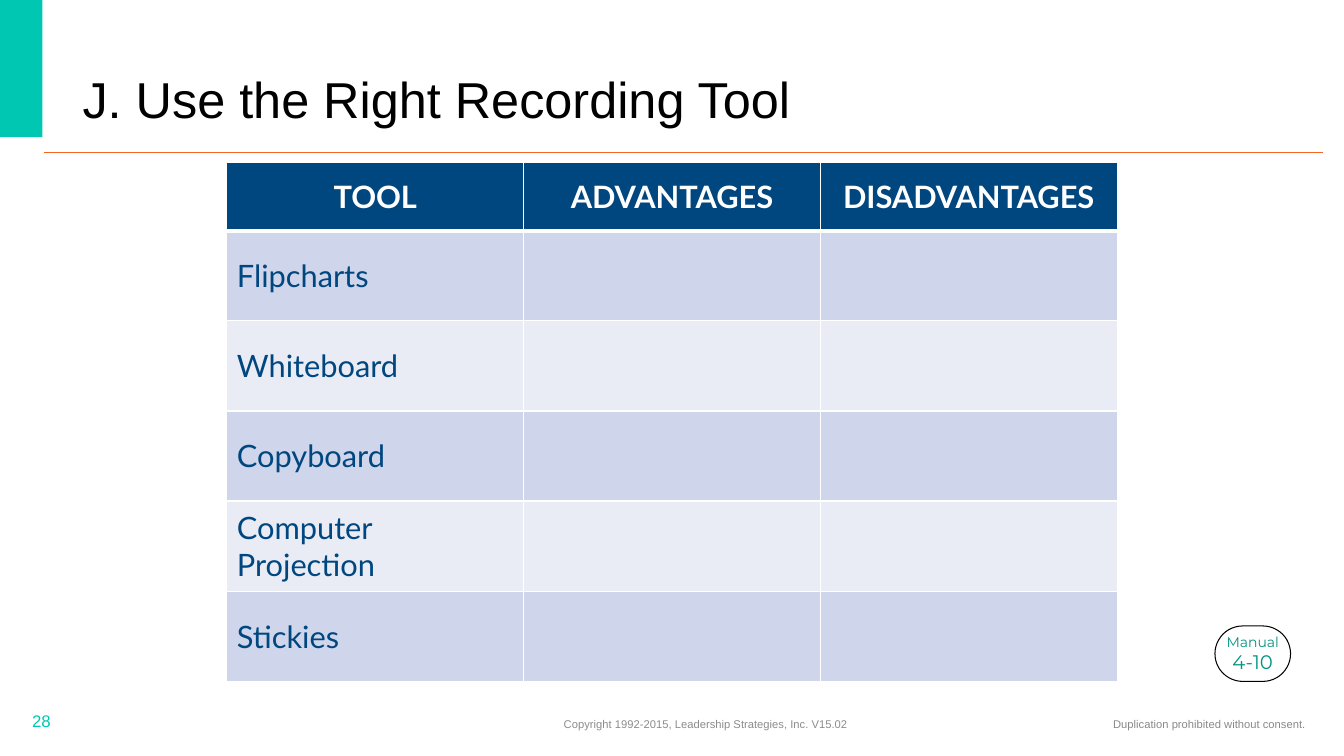
from lxml import etree
from pptx import Presentation
from pptx.dml.color import RGBColor
from pptx.enum.shapes import MSO_CONNECTOR, MSO_SHAPE
from pptx.enum.text import MSO_ANCHOR, PP_ALIGN
from pptx.oxml.ns import qn
from pptx.util import Inches, Pt

LEFT, MID, RIGHT = PP_ALIGN.LEFT, PP_ALIGN.CENTER, PP_ALIGN.RIGHT
CENTER, BASE = MSO_ANCHOR.MIDDLE, MSO_ANCHOR.BOTTOM
RECT, ROUND = MSO_SHAPE.RECTANGLE, MSO_SHAPE.ROUNDED_RECTANGLE
LINE = MSO_CONNECTOR.STRAIGHT

WHITE = RGBColor(0xFF, 0xFF, 0xFF)
BLACK = RGBColor(0, 0, 0)
TEAL = RGBColor(0x00, 0xC7, 0xB1)
GREEN = RGBColor(0x00, 0x93, 0x83)
ORANGE = RGBColor(0xF2, 0x65, 0x22)
NAVY = RGBColor(0x00, 0x46, 0x7F)
BANDS = RGBColor(0xCF, 0xD5, 0xEA), RGBColor(0xE9, 0xEB, 0xF5)
GRAY = RGBColor(0x89, 0x89, 0x89)
ASH = RGBColor(0x8C, 0x8C, 0x8C)

HEADS = "TOOL", "ADVANTAGES", "DISADVANTAGES"
TOOLS = "Flipcharts", "Whiteboard", "Copyboard", "Computer Projection", "Stickies"


def style(para, size, color, face="Arial", align=LEFT, bold=False):
    """Align a paragraph and format its runs."""
    para.alignment = align
    for run in para.runs:
        font = run.font
        font.name, font.size, font.bold = face, Pt(size), bold
        font.color.rgb = color


def label(slide, box, text, size, color, align=LEFT, anchor=CENTER):
    """Place one line of text in a box and return its paragraph."""
    frame = slide.shapes.add_textbox(*map(Inches, box)).text_frame
    frame.word_wrap = True
    frame.vertical_anchor = anchor
    frame.text = text
    style(frame.paragraphs[0], size, color, align=align)
    return frame.paragraphs[0]


def header(slide, left, top, width):
    """Draw the accent bar, the title and the rule below it."""
    bar = slide.shapes.add_shape(
        RECT, Inches(left), Inches(top), Inches(0.44), Inches(1.38))
    bar.shadow.inherit = False
    bar.fill.solid()
    bar.fill.fore_color.rgb = TEAL
    bar.line.fill.background()
    start, level = left + 0.46, top + 1.53
    rule = slide.shapes.add_connector(
        LINE, Inches(start), Inches(level), Inches(left + width), Inches(level))
    rule.line.color.rgb = ORANGE
    rule.line.width = Pt(0.5)
    etree.SubElement(rule.element.spPr, qn("a:effectLst"))
    title = label(slide, (left + 0.74, top + 0.59, 8.12, 0.76),
                  "J. Use the Right Recording Tool", 36, BLACK, anchor=BASE)
    title.line_spacing = 0.9


def footer(slide, left, top, width):
    """Place the page number, copyright and notice along the bottom."""
    label(slide, (left, top - 0.03, 3, 0.4), "28", 12, TEAL)
    label(slide, (left + 3.4, top, 6.76, 0.4),
          "Copyright 1992-2015, Leadership Strategies, Inc. V15.02", 8, ASH, MID)
    label(slide, (left + width - 5.63, top, 5.63, 0.4),
          "Duplication prohibited without consent.", 8, GRAY, RIGHT)


def edge(cell, widths):
    """Give a cell white borders of the given widths in points."""
    props = cell._tc.get_or_add_tcPr()
    for side, width in zip("LRTB", widths):
        line = etree.SubElement(props, qn(f"a:ln{side}"), w=str(Pt(width)))
        fill = etree.SubElement(line, qn("a:solidFill"))
        etree.SubElement(fill, qn("a:srgbClr"), val=str(WHITE))


def grid(slide, left, top, width, height):
    """Build the table of tools with empty columns to fill in."""
    rows = [HEADS] + [(tool, "", "") for tool in TOOLS]
    table = slide.shapes.add_table(
        len(rows), len(HEADS), *map(Inches, (left, top, width, height))).table
    first = 0.68
    for col in table.columns:
        col.width = Inches(width / len(HEADS))
    for r, row in enumerate(rows):
        head = r == 0
        table.rows[r].height = Inches(first if head else (height - first) / len(TOOLS))
        for c, text in enumerate(row):
            cell = table.cell(r, c)
            edge(cell, (1, 1, 3 if r == 1 else 1, 3 if head else 1))
            cell.fill.solid()
            cell.fill.fore_color.rgb = NAVY if head else BANDS[(r - 1) % 2]
            cell.vertical_anchor = CENTER
            if text:
                cell.text = text
                style(cell.text_frame.paragraphs[0], 22, WHITE if head else NAVY,
                      "Lato", MID if head else LEFT, head)


def badge(slide, *box):
    """Draw the pill that points to the manual page."""
    pill = slide.shapes.add_shape(ROUND, *map(Inches, box))
    pill.adjustments[0] = 0.5
    pill.shadow.inherit = False
    pill.fill.solid()
    pill.fill.fore_color.rgb = WHITE
    pill.line.color.rgb = BLACK
    pill.line.width = Pt(0.75)
    frame = pill.text_frame
    frame.word_wrap = False
    frame.vertical_anchor = CENTER
    frame.text = "Manual\n4-10"
    for para, size in zip(frame.paragraphs, (10, 14)):
        style(para, size, GREEN, "Montserrat", MID)


def main():
    """Build the slide and save it."""
    deck = Presentation()
    deck.slide_width, deck.slide_height = Inches(13.33), Inches(7.5)
    slide = deck.slides.add_slide(deck.slide_layouts[6])
    header(slide, -0.02, -0.02, 13.14)
    footer(slide, 0.22, 6.98, 12.83)
    grid(slide, 2.25, 1.61, 8.83, 5.15)
    badge(slide, 12.05, 6.21, 0.75, 0.55)
    deck.save("out.pptx")


if __name__ == "__main__":
    main()
